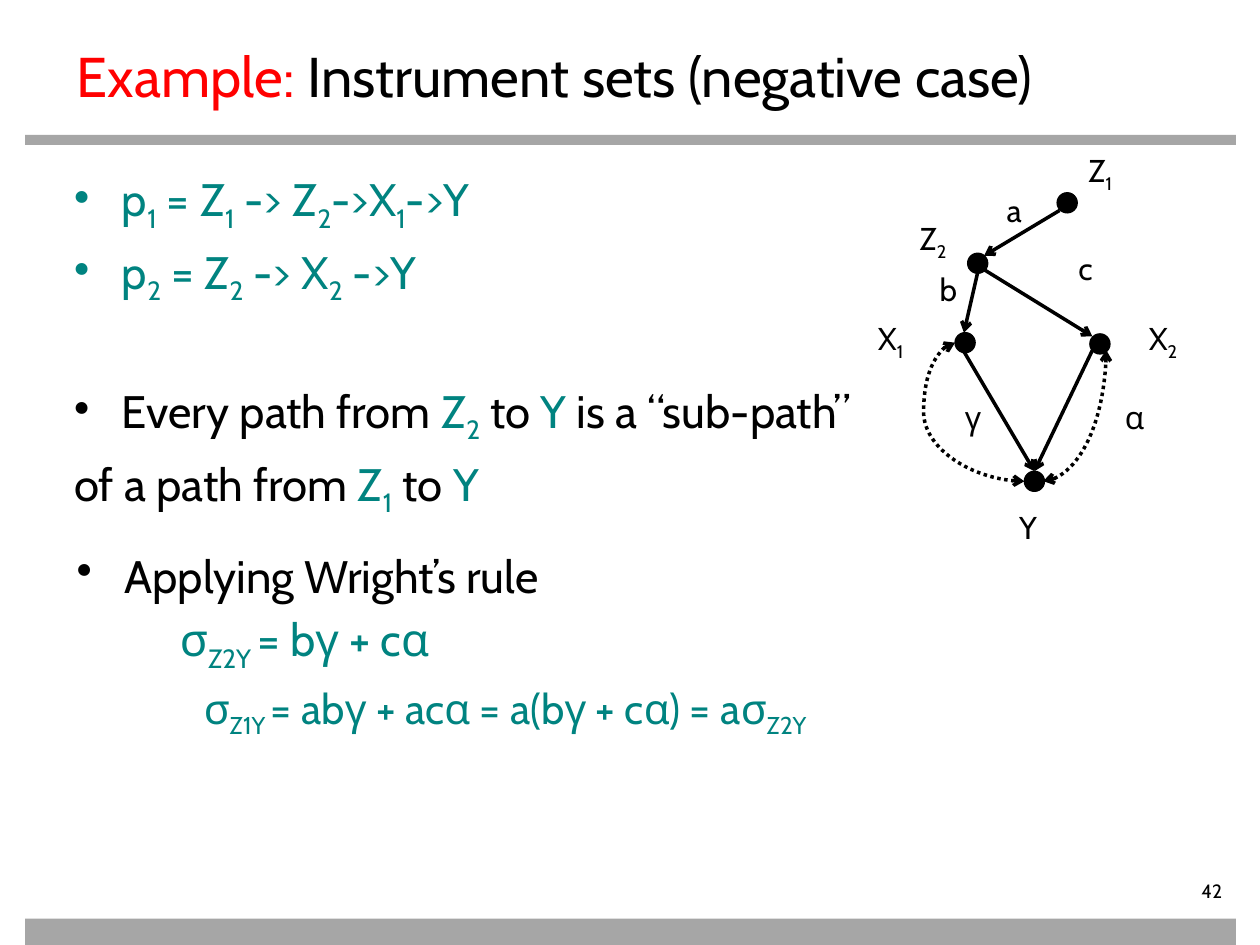
import pptx
import pptx.util
import pptx.dml.color
import pptx.enum.dml
import pptx.enum.shapes
import pptx.enum.text
import pptx.oxml
import pptx.oxml.ns
from lxml import etree

Inches, Pt = pptx.util.Inches, pptx.util.Pt
RGB = pptx.dml.color.RGBColor.from_string
SHAPE = pptx.enum.shapes.MSO_SHAPE
CONN = pptx.enum.shapes.MSO_CONNECTOR
ALIGN = pptx.enum.text.PP_ALIGN
qn = pptx.oxml.ns.qn

THEME = {
    "font": "Cabin",
    "black": "000000", "red": "FF0000", "teal": "008380",
    "bar": "A6A6A6", "white": "FFFFFF",
    "title": 32, "body": 26, "formula": 24, "label": 18, "number": 11,
}
W, H = 10, 7.5
DOT, HANG = 0.16, 0.38

TITLE = [("red", "Example: "), ("black", "Instrument sets (negative case)")]
PATHS = [
    {"runs": [("teal", "p_1_ = Z_1_ -> Z_2_->X_1_->Y")], "bullet": True},
    {"runs": [("teal", "p_2_ = Z_2_ -> X_2_ ->Y")], "bullet": True, "before": 6},
    {"runs": [("black", "Every path from "), ("teal", "Z_2_"), ("black", " to "),
              ("teal", "Y"), ("black", " is a “sub-path”")], "bullet": True, "before": 44},
    {"runs": [("black", "of a path from "), ("teal", "Z_1_"), ("black", " to "),
              ("teal", "Y")], "before": 6},
]
WRIGHT = [
    {"runs": [("black", "Applying Wright’s rule")], "bullet": True},
    {"runs": [("teal", "σ_Z2Y _= bγ + cα")], "indent": 0.82, "before": 5},
    {"runs": [("teal", "σ_Z1Y _= abγ + acα = a(bγ + cα) = aσ_Z2Y_")],
     "indent": 1.01, "before": 5, "size": "formula"},
]
NODES = {"Z1": (8.47, 1.61), "Z2": (7.76, 2.09), "X1": (7.66, 2.72),
         "X2": (8.73, 2.73), "Y": (8.21, 3.82)}
LABELS = [
    ("Z_1_", 8.54, 1.15), ("Z_2_", 7.2, 1.69), ("X_1_", 6.87, 2.48),
    ("X_2_", 9.02, 2.48), ("Y", 7.99, 3.98), ("a", 7.89, 1.47), ("b", 7.36, 2.09),
    ("c", 8.46, 1.93), ("γ", 7.56, 3.11), ("α", 8.83, 3.11),
]
EDGES = [
    ((8.41, 1.67), (7.81, 2.03)), ((7.76, 2.16), (7.65, 2.64)),
    ((7.81, 2.14), (8.67, 2.67)), ((7.65, 2.79), (8.21, 3.74)),
    ((8.67, 2.78), (8.21, 3.74)),
]
ARCS = [
    ((7.58, 2.72), (8.13, 3.82), "curvedConnector3", -45400),
    ((8.28, 3.82), (8.78, 2.78), "curvedConnector2", None),
]


def apply(obj, values):
    for name, value in values.items():
        setattr(obj, name, value)


def add_runs(p, runs, size):
    for color, text in runs:
        for i, part in enumerate(text.split("_")):
            if not part:
                continue
            r = p.add_run()
            r.text = part
            apply(r.font, {"name": THEME["font"], "size": Pt(THEME[size])})
            r.font.color.rgb = RGB(THEME[color])
            if i % 2:
                r._r.get_or_add_rPr().set("baseline", "-25000")


def fill_text(tf, paras):
    for i, item in enumerate(paras):
        p = tf.paragraphs[0] if i == 0 else tf.add_paragraph()
        pPr = p._p.get_or_add_pPr()
        indent = HANG if item.get("bullet") else item.get("indent", 0)
        pPr.set("marL", str(Inches(indent)))
        pPr.set("indent", str(Inches(-HANG if item.get("bullet") else 0)))
        if item.get("bullet"):
            etree.SubElement(pPr, qn("a:buChar")).set("char", "•")
        apply(p, {"alignment": item.get("align", ALIGN.LEFT),
                  "space_before": Pt(item.get("before", 0))})
        add_runs(p, item["runs"], item.get("size", "body"))


def add_box(slide, box, paras, **frame):
    sp = slide.shapes.add_textbox(*map(Inches, box))
    apply(sp.text_frame, {"word_wrap": True, **frame})
    fill_text(sp.text_frame, paras)


def add_solid(slide, kind, box, color):
    sp = slide.shapes.add_shape(kind, *map(Inches, box))
    sp.shadow.inherit = False
    sp.fill.solid()
    sp.fill.fore_color.rgb = RGB(THEME[color])
    sp.line.fill.background()
    return sp


def add_arrow(slide, kind, start, end, ends):
    cx = slide.shapes.add_connector(kind, *map(Inches, start + end))
    cx.line.color.rgb = RGB(THEME["black"])
    cx.line.width = Pt(2)
    if kind == CONN.CURVE:
        cx.line.dash_style = pptx.enum.dml.MSO_LINE.ROUND_DOT
    ln = cx.line._get_or_add_ln()
    for tag in ends:
        etree.SubElement(ln, qn(tag)).set("type", "arrow")
    etree.SubElement(cx._element.spPr, qn("a:effectLst"))
    return cx


def main():
    prs = pptx.Presentation()
    apply(prs, {"slide_width": Inches(W), "slide_height": Inches(H)})
    slide = prs.slides.add_slide(prs.slide_layouts[5])

    for top, height in ((1.07, 0.08), (7.29, 0.21)):
        add_solid(slide, SHAPE.RECTANGLE, (0.2, top, 9.61, height), "bar")

    title = slide.shapes.title
    apply(title, {"left": Inches(0.51), "top": Inches(0.28),
                  "width": Inches(9), "height": Inches(0.55)})
    apply(title.text_frame, {"vertical_anchor": pptx.enum.text.MSO_ANCHOR.TOP,
                             "auto_size": pptx.enum.text.MSO_AUTO_SIZE.NONE})
    fill_text(title.text_frame, [{"runs": TITLE, "size": "title"}])

    add_box(slide, (0.49, 1.31, 6.87, 2.76), PATHS)
    add_box(slide, (0.51, 4.3, 8.9, 2.76), WRIGHT)
    add_box(slide, (8.7, 6.98, 1.1, 0.22),
            [{"runs": [("black", "42")], "size": "number", "align": ALIGN.RIGHT}],
            margin_left=0, margin_top=0, margin_bottom=0)

    for start, end in EDGES:
        add_arrow(slide, CONN.STRAIGHT, start, end, ["a:tailEnd"])
    for start, end, preset, bend in ARCS:
        cx = add_arrow(slide, CONN.CURVE, start, end, ["a:headEnd", "a:tailEnd"])
        geom = cx._element.spPr.find(qn("a:prstGeom"))
        geom.set("prst", preset)
        if bend is not None:
            gd = etree.SubElement(geom.find(qn("a:avLst")), qn("a:gd"))
            gd.set("name", "adj1")
            gd.set("fmla", f"val {bend}")
    for x, y in NODES.values():
        sp = add_solid(slide, SHAPE.OVAL, (x - DOT / 2, y - DOT / 2, DOT, DOT), "black")
        sp.line.color.rgb = RGB(THEME["black"])
        sp.line.width = Pt(0.75)
    for text, x, y in LABELS:
        add_box(slide, (x, y, 0.46 if "_" in text else 0.36, 0.4),
                [{"runs": [("black", text)], "size": "label"}], word_wrap=False)

    prs.save("out.pptx")


if __name__ == "__main__":
    main()
